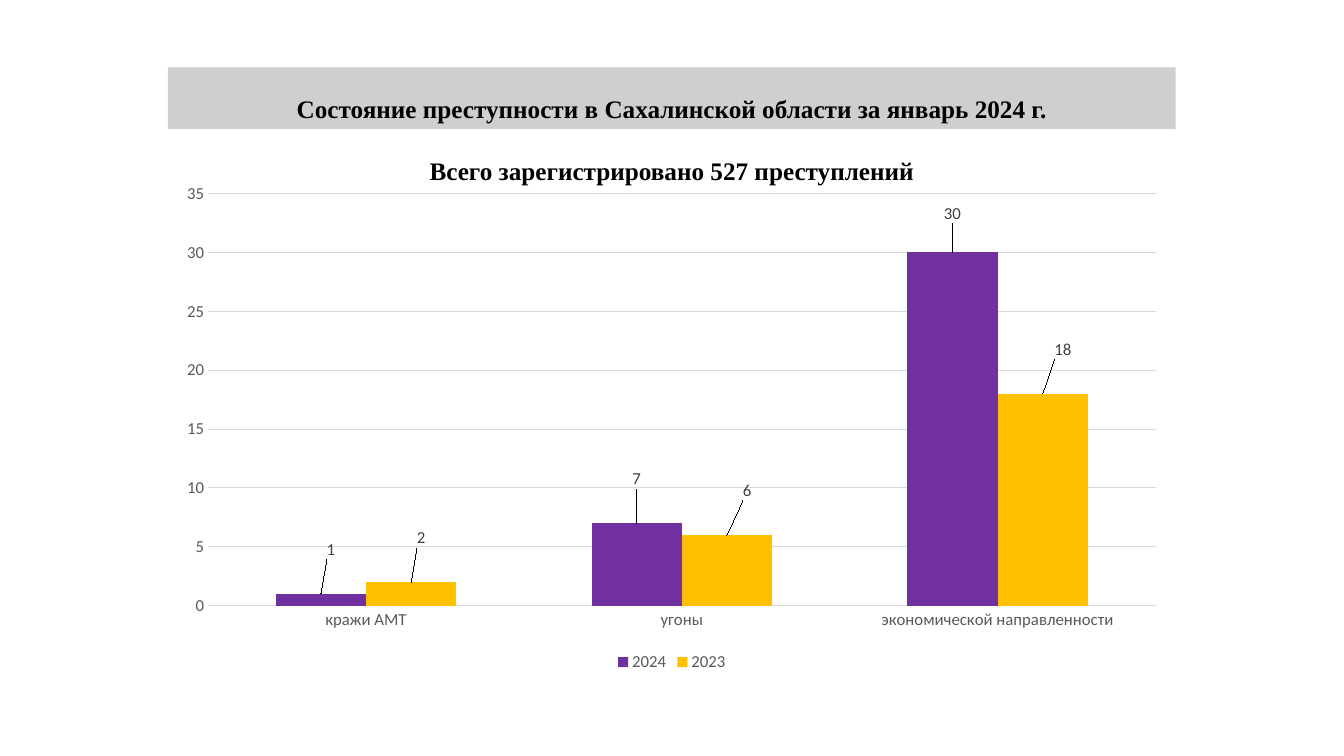
from dataclasses import dataclass

from lxml.etree import SubElement
from pptx import Presentation
from pptx.chart.axis import CategoryAxis, ValueAxis
from pptx.chart.chart import Chart
from pptx.chart.data import CategoryChartData
from pptx.dml.color import RGBColor
from pptx.enum.chart import (XL_CHART_TYPE, XL_LABEL_POSITION,
                             XL_LEGEND_POSITION, XL_TICK_MARK)
from pptx.enum.text import MSO_ANCHOR, MSO_AUTO_SIZE, PP_ALIGN
from pptx.oxml import parse_xml
from pptx.oxml.ns import nsdecls, qn
from pptx.text.text import Font, TextFrame
from pptx.util import Cm, Pt


@dataclass(frozen=True)
class Theme:
    heading_font: str = "Times New Roman"
    chart_font: str = "Calibri"
    heading_size: int = 18
    chart_size: int = 12
    black: str = "000000"
    band: str = "D0CECE"
    axis_text: str = "595959"
    label_text: str = "404040"
    grid: str = "D9D9D9"


@dataclass(frozen=True)
class YearSeries:
    year: str
    values: tuple[int, ...]
    color: str
    label_shifts: tuple[tuple[float, float], ...]  # fractions of chart size


THEME = Theme()
LEFT, WIDTH = Cm(4.23), Cm(25.4)
CATEGORIES = ("кражи АМТ", "угоны", "экономической направленности")
YEARS = (
    YearSeries("2024", (1, 7, 30), "7030A0",
               ((0.01, -0.06), (0, -0.06), (0, -0.05))),
    YearSeries("2023", (2, 6, 18), "FFC000",
               ((0.01, -0.06), (0.02, -0.06), (0.02, -0.06))),
)


def style_font(font: Font, name: str, size: int, color: str, bold: bool = False) -> None:
    font.name = name
    font.size = Pt(size)
    font.bold = bold
    font.color.rgb = RGBColor.from_string(color)


def write_heading(frame: TextFrame, text: str, spacing: float,
                  anchor: MSO_ANCHOR) -> None:
    frame.text = text
    frame.word_wrap = True
    frame.auto_size = MSO_AUTO_SIZE.NONE
    frame.vertical_anchor = anchor
    para = frame.paragraphs[0]
    para.alignment = PP_ALIGN.CENTER
    para.line_spacing = spacing
    style_font(para.runs[0].font, THEME.heading_font, THEME.heading_size,
               THEME.black, bold=True)


def style_axis(axis: CategoryAxis | ValueAxis) -> None:
    axis.major_tick_mark = axis.minor_tick_mark = XL_TICK_MARK.NONE
    axis.format.line.fill.background()
    style_font(axis.tick_labels.font, THEME.chart_font, THEME.chart_size,
               THEME.axis_text)


def manual_layout(**settings: float | str):
    layout = parse_xml(f"<c:layout {nsdecls('c')}><c:manualLayout/></c:layout>")
    for tag, value in settings.items():
        SubElement(layout[0], qn(f"c:{tag}")).set("val", str(value))
    return layout


def style_series(chart: Chart) -> None:
    for series, year in zip(chart.plots[0].series, YEARS):
        series.format.fill.solid()
        series.format.fill.fore_color.rgb = RGBColor.from_string(year.color)
        for index in range(len(year.values)):
            label = series.points[index].data_label
            style_font(label.font, THEME.chart_font, THEME.chart_size,
                       THEME.label_text)
            label.position = XL_LABEL_POSITION.OUTSIDE_END
    # Move the value labels away from the bar tops
    shifts = [shift for year in YEARS for shift in year.label_shifts]
    for label, (x, y) in zip(chart.element.xpath(".//c:dLbl"), shifts):
        label.find(qn("c:idx")).addnext(manual_layout(x=x, y=y))


def add_crime_chart(slide) -> None:
    data = CategoryChartData()
    data.categories = CATEGORIES
    for year in YEARS:
        data.add_series(year.year, year.values)
    chart = slide.shapes.add_chart(XL_CHART_TYPE.COLUMN_CLUSTERED, LEFT, Cm(4.37),
                                   WIDTH, Cm(12.67), data).chart
    chart.has_title = False
    style_font(chart.font, THEME.chart_font, THEME.chart_size, THEME.axis_text)

    # Axes and grid
    style_axis(chart.category_axis)
    value_axis = chart.value_axis
    style_axis(value_axis)
    value_axis.minimum_scale, value_axis.maximum_scale = 0, 35
    value_axis.major_unit = 5
    grid_line = value_axis.major_gridlines.format.line
    grid_line.color.rgb = RGBColor.from_string(THEME.grid)
    grid_line.width = Pt(0.75)

    # Bars and plot area
    plot = chart.plots[0]
    plot.gap_width, plot.overlap = 150, 0
    plot.vary_by_categories = False
    style_series(chart)
    plot_area = chart.element.xpath(".//c:plotArea")[0]
    for old_layout in plot_area.findall(qn("c:layout")):
        plot_area.remove(old_layout)
    plot_area.insert(0, manual_layout(layoutTarget="inner", xMode="edge",
                                      yMode="edge", x=0.04, y=0.04, w=0.94, h=0.82))

    # Legend
    chart.has_legend = True
    chart.legend.position = XL_LEGEND_POSITION.BOTTOM
    chart.legend.include_in_layout = False
    style_font(chart.legend.font, THEME.chart_font, THEME.chart_size,
               THEME.axis_text)


def main() -> None:
    deck = Presentation()
    deck.slide_width, deck.slide_height = Cm(33.87), Cm(19.05)
    slide = deck.slides.add_slide(deck.slide_layouts[5])

    # Title band
    title = slide.shapes.title
    title.left, title.top, title.width, title.height = LEFT, Cm(1.7), WIDTH, Cm(1.55)
    title.fill.solid()
    title.fill.fore_color.rgb = RGBColor.from_string(THEME.band)
    write_heading(title.text_frame,
                  "Состояние преступности в Сахалинской области за январь 2024 г.",
                  0.9, MSO_ANCHOR.BOTTOM)

    # Subtitle
    box = slide.shapes.add_textbox(LEFT, Cm(3.94), WIDTH, Cm(0.91))
    write_heading(box.text_frame, "Всего зарегистрировано 527 преступлений",
                  0.8, MSO_ANCHOR.TOP)

    add_crime_chart(slide)
    deck.save("out.pptx")


if __name__ == "__main__":
    main()
